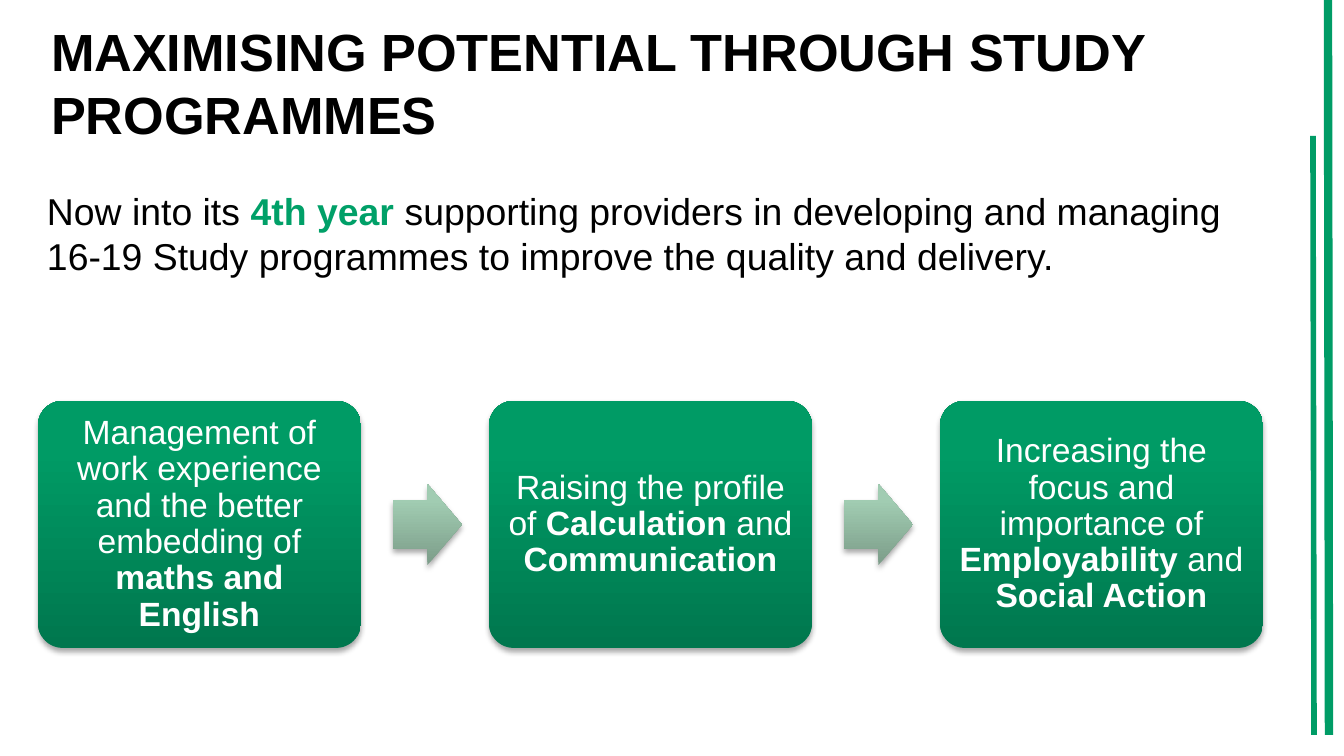
from copy import deepcopy
from lxml import etree
from pptx import Presentation
from pptx import util as u
from pptx.dml.color import RGBColor
from pptx.enum import shapes, text
from pptx.oxml.ns import qn

BLACK = RGBColor(0x00, 0x00, 0x00)
WHITE = RGBColor(0xFF, 0xFF, 0xFF)
GREEN = RGBColor(0x00, 0x9C, 0x66)
YEAR_GREEN = RGBColor(0x00, 0xA0, 0x68)
STEP_GRADIENT = [(0, RGBColor(0x00, 0x77, 0x4E)), (0.8, RGBColor(0x00, 0x9B, 0x65)),
                 (1, RGBColor(0x00, 0x9C, 0x65))]
ARROW_GRADIENT = [(0, RGBColor(0x7C, 0x9D, 0x89)), (0.8, RGBColor(0xA1, 0xCC, 0xB2)),
                  (1, RGBColor(0xA1, 0xCD, 0xB3))]

TITLE = [("MAXIMISING POTENTIAL THROUGH STUDY\vPROGRAMMES", {"bold": True})]
INTRO = [
    ("Now into its ", {}),
    ("4th year ", {"bold": True, "color": YEAR_GREEN}),
    ("supporting providers in developing and managing 16-19 Study programmes "
     "to improve the quality and delivery.", {}),
]
STEPS = [
    [("Management of work experience and the better embedding of ", {}),
     ("maths and English", {"bold": True})],
    [("Raising the profile of ", {}), ("Calculation ", {"bold": True}),
     ("and", {}), (" Communication", {"bold": True})],
    [("Increasing the focus and importance of ", {}), ("Employability", {"bold": True}),
     (" and ", {}), ("Social Action", {"bold": True})],
]
RULES = [((1328, 0, 1329, 735), 4.5), ((1313, 136, 1314, 735), 3)]

STEP_LEFT, STEP_TOP, STEP_WIDTH, STEP_HEIGHT, STEP_PITCH = 38, 401, 323, 247, 451
ARROW_OFFSET, ARROW_WIDTH, ARROW_HEIGHT = 355, 69, 81
STEP_INSET = 9


def px(length):
    return round(length * 914400 / 134.4)


def write(frame, runs, size, color, inset=0, anchor=text.MSO_ANCHOR.TOP, **paragraph_format):
    frame_format = {"word_wrap": True, "vertical_anchor": anchor}
    for side in ("left", "top", "right", "bottom"):
        frame_format[f"margin_{side}"] = px(inset)
    for name, value in frame_format.items():
        setattr(frame, name, value)
    paragraph = frame.paragraphs[0]
    for name, value in paragraph_format.items():
        setattr(paragraph, name, value)
    for words, style in runs:
        for index, line in enumerate(words.split("\v")):
            if index:
                paragraph.add_line_break()
            run = paragraph.add_run()
            run.text = line
            font_format = {"name": "Arial", "size": u.Pt(size), "bold": style.get("bold", False)}
            for name, value in font_format.items():
                setattr(run.font, name, value)
            run.font.color.rgb = style.get("color", color)


def add_block(slide, preset, box, adjustments, gradient):
    block = slide.shapes.add_shape(preset, *map(px, box))
    for index, value in enumerate(adjustments):
        block.adjustments[index] = value
    block.line.fill.background()
    block.fill.gradient()
    block.fill.gradient_angle = 90
    stop_list = block._element.spPr.find(".//" + qn("a:gsLst"))
    stop_list.append(deepcopy(stop_list[-1]))
    for stop, (position, color) in zip(block.fill.gradient_stops, gradient):
        stop.position = position
        stop.color.rgb = color
    block.shadow.inherit = False
    effects = block._element.spPr.find(qn("a:effectLst"))
    shadow = etree.SubElement(effects, qn("a:outerShdw"), blurRad=str(u.Pt(3.1)),
                              dist=str(u.Pt(1.8)), dir="5400000", rotWithShape="0")
    shade = etree.SubElement(shadow, qn("a:srgbClr"), val=str(BLACK))
    etree.SubElement(shade, qn("a:alpha"), val="35000")
    return block


deck = Presentation()
deck.slide_width, deck.slide_height = px(1344), px(756)
slide = deck.slides.add_slide(deck.slide_layouts[6])

for ends, width in RULES:
    rule = slide.shapes.add_connector(shapes.MSO_CONNECTOR.STRAIGHT, *map(px, ends))
    rule.line.color.rgb = GREEN
    rule.line.width = u.Pt(width)
    etree.SubElement(rule._element.spPr, qn("a:effectLst"))

title = slide.shapes.add_textbox(*map(px, (51, 19, 1223, 126)))
write(title.text_frame, TITLE, 28, BLACK, anchor=text.MSO_ANCHOR.MIDDLE)
intro = slide.shapes.add_textbox(*map(px, (47, 188, 1227, 180)))
write(intro.text_frame, INTRO, 20, BLACK)

for index, runs in enumerate(STEPS):
    left = STEP_LEFT + index * STEP_PITCH
    step = add_block(slide, shapes.MSO_SHAPE.ROUNDED_RECTANGLE,
                     (left, STEP_TOP, STEP_WIDTH, STEP_HEIGHT), [0.1], STEP_GRADIENT)
    write(step.text_frame, runs, 18, WHITE, STEP_INSET, text.MSO_ANCHOR.MIDDLE,
          alignment=text.PP_ALIGN.CENTER, line_spacing=0.9)
    if index < len(STEPS) - 1:
        arrow_top = STEP_TOP + (STEP_HEIGHT - ARROW_HEIGHT) // 2
        add_block(slide, shapes.MSO_SHAPE.RIGHT_ARROW,
                  (left + ARROW_OFFSET, arrow_top, ARROW_WIDTH, ARROW_HEIGHT),
                  [0.6, 0.5], ARROW_GRADIENT)

deck.save("out.pptx")
